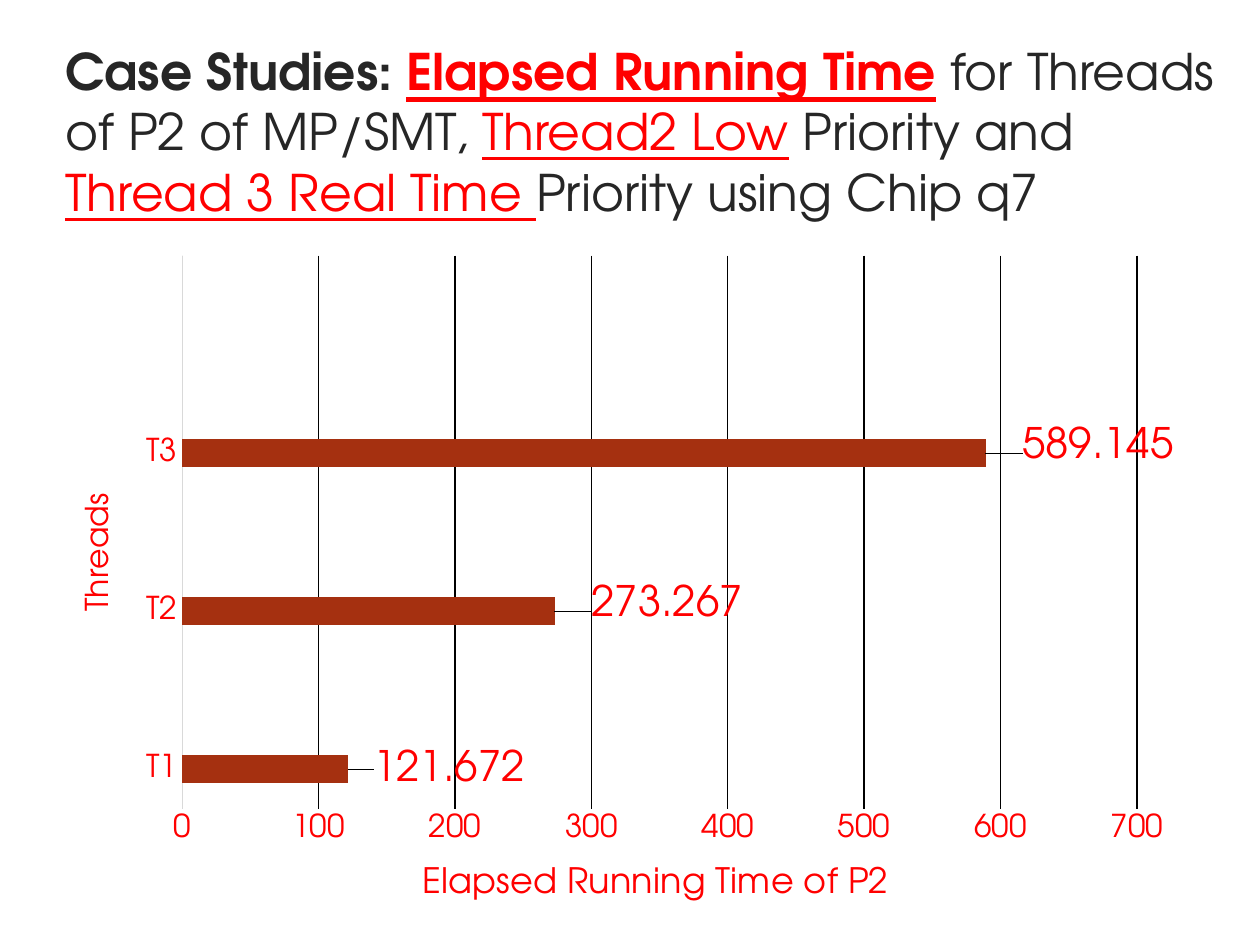
from lxml import etree
from pptx import Presentation
from pptx import util as u
from pptx.chart.data import CategoryChartData
from pptx.dml.color import RGBColor
from pptx.enum import chart as ch, text
from pptx.oxml.ns import qn

RED = RGBColor(0xFF, 0x00, 0x00)
DARK = RGBColor(0x26, 0x26, 0x26)
BLACK = RGBColor(0x00, 0x00, 0x00)
GREY = RGBColor(0xD9, 0xD9, 0xD9)
RUST = RGBColor(0xA5, 0x30, 0x10)

TITLE = [
    ("Case Studies: ", dict(bold=True)),
    ("Elapsed Running Time", dict(bold=True, color=RED, underline=True)),
    (" for Threads of P2 of MP/SMT, ", {}),
    ("Thread2 Low", dict(color=RED, underline=True)),
    (" Priority and ", {}),
    ("Thread 3 Real Time ", dict(color=RED, underline=True)),
    ("Priority using Chip q7", {}),
]
# Every second slot of the category axis holds a thread
SLOTS = ["T1", "", "T2", "", "T3", "", ""]
TIMES = [121.672, None, 273.267, None, 589.145, None, None]
LABEL_SHIFTS = {0: (0.16, 0), 2: (0.17, -0.01), 4: (0.17, -0.01)}


def set_font(font, size, color=DARK, bold=False, underline=False):
    font.name = "TeX Gyre Adventor"
    font.size = u.Pt(size)
    font.bold = bold
    font.underline = underline
    font.color.rgb = color


def add_run(p, words, **fmt):
    r = p.add_run()
    r.text = words
    set_font(r.font, **fmt)


def set_layout(parent, index, **values):
    """Place a chart part by shares of the chart's size."""
    for old in parent.findall(qn("c:layout")):
        parent.remove(old)
    layout = etree.Element(qn("c:layout"))
    manual = etree.SubElement(layout, qn("c:manualLayout"))
    for tag, value in values.items():
        etree.SubElement(manual, qn(f"c:{tag}")).set("val", str(value))
    parent.insert(index, layout)


class Deck:
    def __init__(self, width, height):
        self.prs = Presentation()
        self.prs.slide_width, self.prs.slide_height = u.Inches(width), u.Inches(height)
        self.s = self.prs.slides.add_slide(self.prs.slide_layouts[6])

    def box(self, x, y, w, h):
        """Turn shares of the slide's size into lengths."""
        W, H = self.prs.slide_width, self.prs.slide_height
        return int(x * W), int(y * H), int(w * W), int(h * H)

    def title(self, runs, *shares):
        tf = self.s.shapes.add_textbox(*self.box(*shares)).text_frame
        tf.word_wrap = True
        tf.vertical_anchor = text.MSO_ANCHOR.MIDDLE
        for words, fmt in runs:
            add_run(tf.paragraphs[0], words, size=28.8, **fmt)

    def bar_chart(self, cats, vals, *shares):
        data = CategoryChartData()
        data.categories = cats
        data.add_series("Series 1", vals)
        chart = self.s.shapes.add_chart(
            ch.XL_CHART_TYPE.BAR_CLUSTERED, *self.box(*shares), data).chart
        set_font(chart.font, 10, BLACK)
        chart.has_legend = chart.has_title = False
        plot = chart.plots[0]
        plot.gap_width = 182
        plot.vary_by_categories = False
        fill = plot.series[0].format.fill
        fill.solid()
        fill.fore_color.rgb = RUST
        set_layout(chart._chartSpace.chart.plotArea, 0, layoutTarget="inner",
                   xMode="edge", yMode="edge", x=0.114, y=0.02, w=0.842, h=0.81)
        return chart

    def axis(self, axis, name, size, x, y):
        axis.major_tick_mark = axis.minor_tick_mark = ch.XL_TICK_MARK.NONE
        set_font(axis.tick_labels.font, 18, RED)
        title = axis.axis_title
        add_run(title.text_frame.paragraphs[0], name, size=size, color=RED)
        set_layout(title._element, 1, xMode="edge", yMode="edge", x=x, y=y)

    def labels(self, series, shifts):
        for i, (x, y) in shifts.items():
            label = series.points[i].data_label
            set_font(label.font, 24, RED)
            label.position = ch.XL_LABEL_POSITION.INSIDE_END
            set_layout(label._dLbl, 1, x=x, y=y)


def main():
    deck = Deck(10, 7.5)
    deck.title(TITLE, 0.042, 0.033, 0.95, 0.21)

    # Running time of each thread
    chart = deck.bar_chart(SLOTS, TIMES, 0.042, 0.256, 0.9, 0.723)
    deck.labels(chart.plots[0].series[0], LABEL_SHIFTS)

    # Axes
    threads, time = chart.category_axis, chart.value_axis
    deck.axis(threads, "Threads", 18, 0.02, 0.36)
    threads.format.line.color.rgb = GREY
    threads.format.line.width = u.Pt(0.75)
    deck.axis(time, "Elapsed Running Time of P2", 20, 0.32, 0.9)
    time.minimum_scale, time.maximum_scale, time.major_unit = 0, 700, 100
    time.format.line.fill.background()
    grid = time.major_gridlines.format.line
    grid.color.rgb = BLACK
    grid.width = u.Pt(0.75)

    deck.prs.save("out.pptx")


if __name__ == "__main__":
    main()
